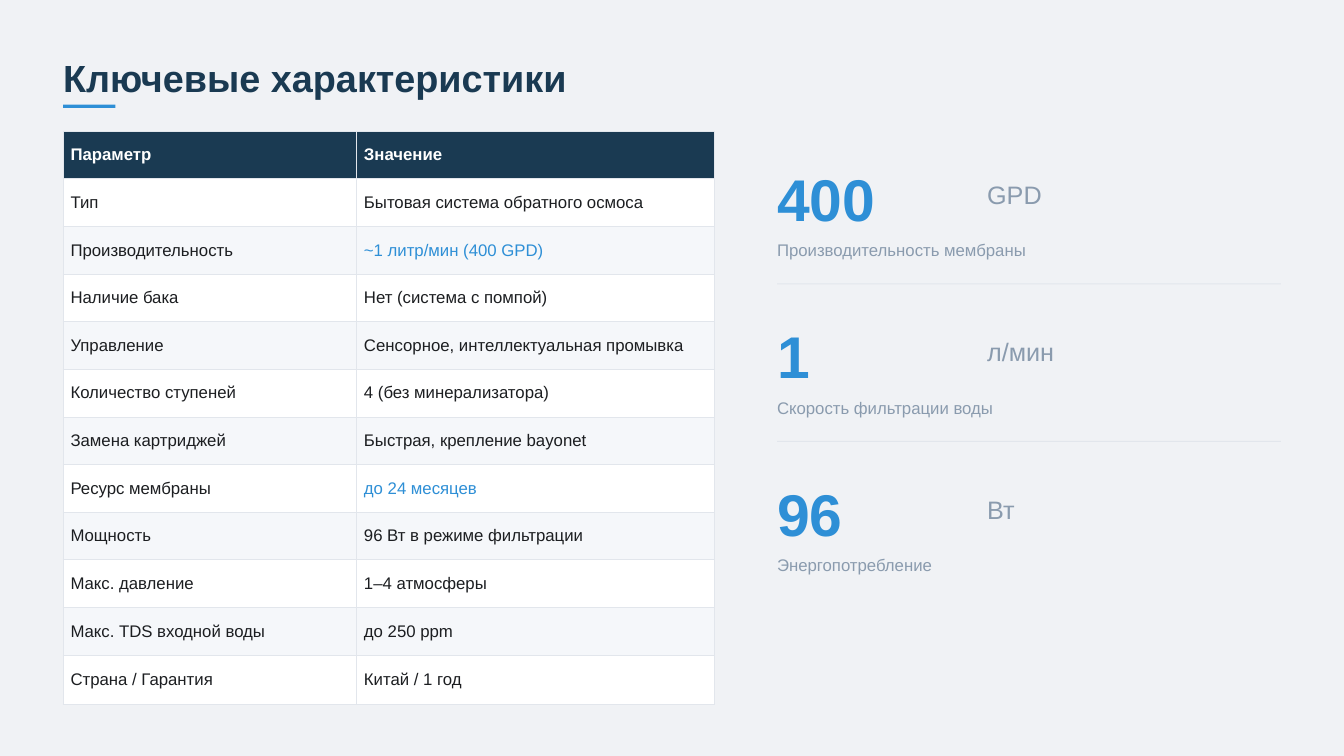
from lxml.etree import SubElement
from pptx import Presentation
from pptx.dml.color import RGBColor
from pptx.enum.shapes import MSO_SHAPE as Shape
from pptx.enum.text import MSO_ANCHOR as Anchor
from pptx.oxml.ns import qn
from pptx.util import Cm, Pt

NAVY = RGBColor(0x1A, 0x3A, 0x52)
BLUE = RGBColor(0x2E, 0x8F, 0xD6)
INK = RGBColor(0x1C, 0x1E, 0x21)
GRAY = RGBColor(0x8A, 0x9B, 0xAE)
LINE = RGBColor(0xE2, 0xE6, 0xEC)
STRIPE = RGBColor(0xF5, 0xF7, 0xFA)
BACKGROUND = RGBColor(0xF0, 0xF2, 0xF5)
WHITE = RGBColor(0xFF, 0xFF, 0xFF)

TITLE = {"size": Pt(36), "bold": True, "color": NAVY}
HEADER = {"size": Pt(16), "bold": True, "color": WHITE}
BODY = {"size": Pt(16), "bold": False, "color": INK}
ACCENT = {**BODY, "color": BLUE}
NUMBER = {"size": Pt(56), "bold": True, "color": BLUE}
UNIT = {"size": Pt(24), "bold": False, "color": GRAY}
CAPTION = {"size": Pt(16), "bold": False, "color": GRAY}

MARGIN = 2.12
METRIC_LEFT = 26.11
METRIC_WIDTH = 16.93
METRIC_STEP = 5.29

SPECIFICATIONS = [
    ("Параметр", "Значение"),
    ("Тип", "Бытовая система обратного осмоса"),
    ("Производительность", "~1 литр/мин (400 GPD)"),
    ("Наличие бака", "Нет (система с помпой)"),
    ("Управление", "Сенсорное, интеллектуальная промывка"),
    ("Количество ступеней", "4 (без минерализатора)"),
    ("Замена картриджей", "Быстрая, крепление bayonet"),
    ("Ресурс мембраны", "до 24 месяцев"),
    ("Мощность", "96 Вт в режиме фильтрации"),
    ("Макс. давление", "1–4 атмосферы"),
    ("Макс. TDS входной воды", "до 250 ppm"),
    ("Страна / Гарантия", "Китай / 1 год"),
]
HIGHLIGHTED = {"~1 литр/мин (400 GPD)", "до 24 месяцев"}

METRICS = [
    ("400", "GPD", "Производительность мембраны"),
    ("1", "л/мин", "Скорость фильтрации воды"),
    ("96", "Вт", "Энергопотребление"),
]


def write(paragraph, text, style):
    run = paragraph.add_run()
    run.text = text
    run.font.name = "Arial"
    for name, value in style.items():
        if name == "color":
            run.font.color.rgb = value
        else:
            setattr(run.font, name, value)


def add_text(slide, text, left, top, width, height, style, spacing=None):
    box = slide.shapes.add_textbox(Cm(left), Cm(top), Cm(width), Cm(height))
    frame = box.text_frame
    layout = {"margin_left": 0, "margin_top": 0, "margin_right": 0,
              "margin_bottom": 0, "word_wrap": False,
              "vertical_anchor": Anchor.MIDDLE}
    for name, value in layout.items():
        setattr(frame, name, value)
    paragraph = frame.paragraphs[0]
    paragraph.line_spacing = spacing
    write(paragraph, text, style)


def add_bar(slide, left, top, width, height, color):
    bar = slide.shapes.add_shape(
        Shape.RECTANGLE, Cm(left), Cm(top), Cm(width), Cm(height))
    bar.shadow.inherit = False
    bar.fill.solid()
    bar.fill.fore_color.rgb = color
    bar.line.fill.background()


def add_borders(cell):
    properties = cell._tc.get_or_add_tcPr()
    for position, side in enumerate(("a:lnL", "a:lnR", "a:lnT", "a:lnB")):
        border = SubElement(properties, qn(side), w=str(Pt(1)))
        fill = SubElement(border, qn("a:solidFill"))
        SubElement(fill, qn("a:srgbClr"), val=str(LINE))
        # Borders come before the cell fill
        properties.insert(position, border)


def fill_cell(cell, text, style, color):
    layout = {"margin_left": Cm(0.25), "margin_right": Cm(0.25),
              "margin_top": 0, "margin_bottom": 0,
              "vertical_anchor": Anchor.MIDDLE}
    for name, value in layout.items():
        setattr(cell, name, value)
    cell.fill.solid()
    cell.fill.fore_color.rgb = color
    write(cell.text_frame.paragraphs[0], text, style)
    add_borders(cell)


def add_specifications(slide):
    widths = (9.86, 12.04)
    heights = [1.6] * (len(SPECIFICATIONS) - 1) + [1.67]
    table = slide.shapes.add_table(
        len(heights), len(widths), Cm(MARGIN), Cm(4.41),
        Cm(sum(widths)), Cm(sum(heights))).table
    for column, width in zip(table.columns, widths):
        column.width = Cm(width)
    for row_index, texts in enumerate(SPECIFICATIONS):
        table.rows[row_index].height = Cm(heights[row_index])
        for column_index, text in enumerate(texts):
            if row_index == 0:
                style, color = HEADER, NAVY
            else:
                style = ACCENT if text in HIGHLIGHTED else BODY
                color = WHITE if row_index % 2 else STRIPE
            fill_cell(table.cell(row_index, column_index), text, style, color)


def add_metric(slide, top, number, unit, caption):
    add_text(slide, number, METRIC_LEFT, top, 7.06, 2.47, NUMBER, 1.1)
    add_text(slide, unit, METRIC_LEFT + 7.06, top, 4.23, 2.47, UNIT)
    add_text(slide, caption, METRIC_LEFT, top + 2.47, METRIC_WIDTH, 1,
             CAPTION, 1.4)


def main():
    presentation = Presentation()
    presentation.slide_width = Cm(45.16)
    presentation.slide_height = Cm(25.4)
    slide = presentation.slides.add_slide(presentation.slide_layouts[6])
    slide.background.fill.solid()
    slide.background.fill.fore_color.rgb = BACKGROUND

    # Title with its underline
    add_text(slide, "Ключевые характеристики", MARGIN, 1.57, 17.63, 1.75,
             TITLE, 1.2)
    add_bar(slide, MARGIN, 3.52, 1.76, 0.11, BLUE)

    # Specification table
    add_specifications(slide)

    # Key metrics, with a rule between neighbours
    for index, metric in enumerate(METRICS):
        top = METRIC_STEP * (index + 1)
        add_metric(slide, top, *metric)
        if index < len(METRICS) - 1:
            add_bar(slide, METRIC_LEFT, top + 4.23, METRIC_WIDTH, 0.04, LINE)

    presentation.save("out.pptx")


if __name__ == "__main__":
    main()
